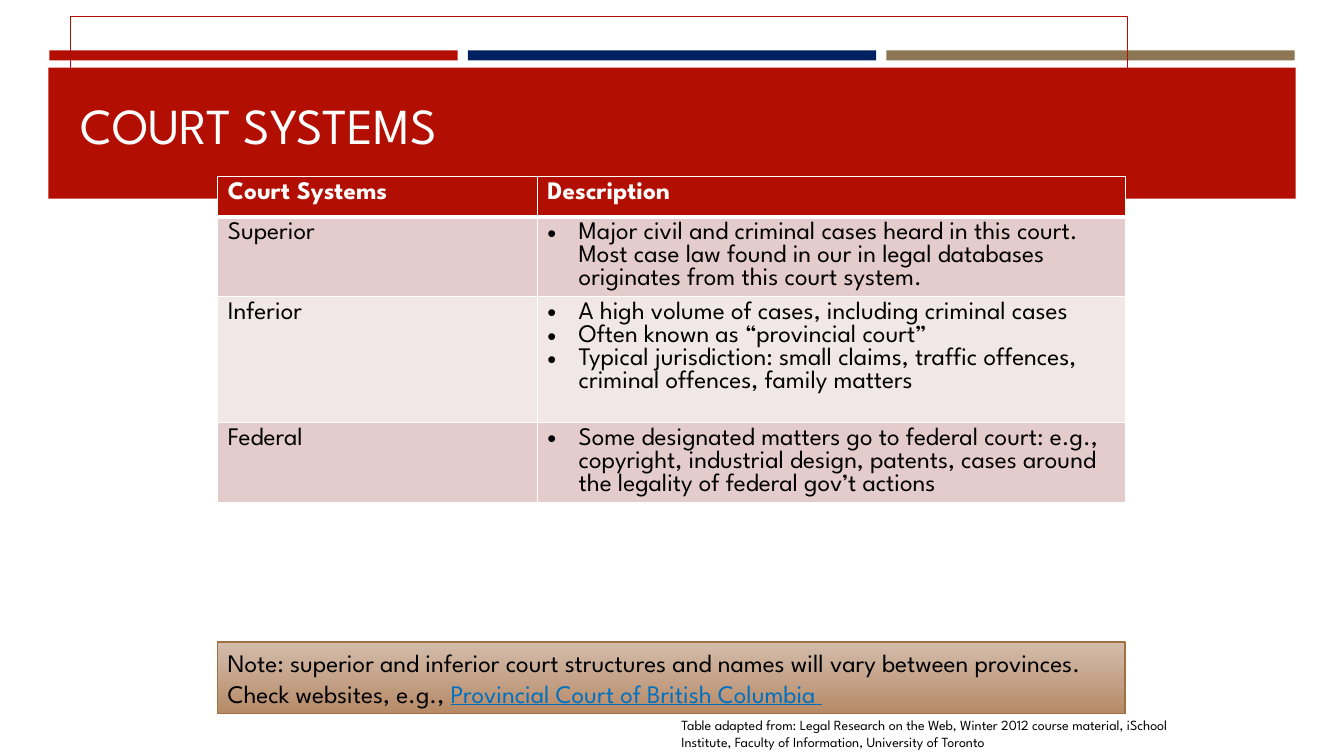
from lxml import etree
from pptx import Presentation
from pptx.dml.color import RGBColor
from pptx.enum import shapes, text
from pptx.oxml import ns
from pptx.util import Inches, Pt

RED = RGBColor(0xB2, 0x0F, 0x02)
NAVY = RGBColor(0x00, 0x20, 0x60)
TAN = RGBColor(0x8D, 0x76, 0x54)
WHITE = RGBColor(0xFF, 0xFF, 0xFF)
BLACK = RGBColor(0x00, 0x00, 0x00)
LINK_BLUE = RGBColor(0x00, 0x70, 0xC0)
ROSE = RGBColor(0xE4, 0xCC, 0xCC)
PALE_ROSE = RGBColor(0xF2, 0xE7, 0xE7)
NOTE_TOP = RGBColor(0xCF, 0xB5, 0xA3)
NOTE_BOTTOM = RGBColor(0xB7, 0x8A, 0x66)
NOTE_LINE = RGBColor(0xA0, 0x70, 0x42)


def add_run(paragraph, wording, size, color, **formats):
    run = paragraph.add_run()
    run.text = wording
    run.font.color.rgb = color
    for name, value in {"name": "League Spartan", "size": Pt(size), **formats}.items():
        setattr(run.font, name, value)


def add_rectangle(left, top, width, height, color):
    shape = slide.shapes.add_shape(
        shapes.MSO_SHAPE.RECTANGLE, Inches(left), Inches(top), Inches(width), Inches(height))
    shape.shadow.inherit = False
    shape.fill.solid()
    shape.fill.fore_color.rgb = color
    shape.line.fill.background()
    return shape


presentation = Presentation()
presentation.slide_width = Inches(13.33)
presentation.slide_height = Inches(7.5)
slide = presentation.slides.add_slide(presentation.slide_layouts[5])

# Three bars above the title band
for index, color in enumerate([RED, NAVY, TAN]):
    add_rectangle(0.49 + index * 4.15, 0.5, 4.05, 0.1, color)
add_rectangle(0.48, 0.67, 12.37, 1.3, RED)

# Title, outlined and in front of the band
title = slide.shapes.title
slide.shapes._spTree.append(title._element)
for name, value in {"left": 0.7, "top": 0.16, "width": 10.48, "height": 1.42}.items():
    setattr(title, name, Inches(value))
title.line.color.rgb = RED
title.line.width = Pt(0.75)
title.text_frame.vertical_anchor = text.MSO_ANCHOR.BOTTOM
title.text_frame.paragraphs[0].alignment = text.PP_ALIGN.LEFT
add_run(title.text_frame.paragraphs[0], "COURT SYSTEMS", 36, WHITE)

# Table of courts
courts = [
    ("Court Systems", ["Description"]),
    ("Superior", ["Major civil and criminal cases heard in this court. Most case law found in our "
                  "in legal databases originates from this court system."]),
    ("Inferior", ["A high volume of cases, including criminal cases",
                  "Often known as “provincial court”",
                  "Typical jurisdiction: small claims, traffic offences, criminal offences, "
                  "family matters"]),
    ("Federal", ["Some designated matters go to federal court: e.g., copyright, industrial design, "
                 "patents, cases around the legality of federal gov’t actions"]),
]
row_heights = [0.4, 0.79, 1.25, 0.79]
row_fills = [RED, ROSE, PALE_ROSE, ROSE]
table = slide.shapes.add_table(
    len(courts), 2, Inches(2.16), Inches(1.75), Inches(9), Inches(sum(row_heights))).table
for column, width in zip(table.columns, [3.17, 5.83]):
    column.width = Inches(width)

for row_index, (court, descriptions) in enumerate(courts):
    table.rows[row_index].height = Inches(row_heights[row_index])
    is_header = row_index == 0
    for column_index, lines in enumerate([[court], descriptions]):
        cell = table.cell(row_index, column_index)
        for line_index, line in enumerate(lines):
            frame = cell.text_frame
            paragraph = frame.add_paragraph() if line_index else frame.paragraphs[0]
            add_run(paragraph, line, 18, WHITE if is_header else BLACK, bold=is_header)
            if column_index and not is_header:
                properties = paragraph._p.get_or_add_pPr()
                properties.set("marL", str(Inches(0.31)))
                properties.set("indent", str(Inches(-0.31)))
                etree.SubElement(properties, ns.qn("a:buFont"), typeface="Arial")
                etree.SubElement(properties, ns.qn("a:buChar"), char="•")
        # Borders come before the fill in the cell properties
        cell_properties = cell._tc.get_or_add_tcPr()
        for side in ["lnL", "lnR", "lnT", "lnB"]:
            thick = (is_header and side == "lnB") or (row_index == 1 and side == "lnT")
            border = etree.SubElement(
                cell_properties, ns.qn(f"a:{side}"), w=str(Pt(3 if thick else 1)))
            border_fill = etree.SubElement(border, ns.qn("a:solidFill"))
            etree.SubElement(border_fill, ns.qn("a:srgbClr"), val=str(WHITE))
        cell.fill.solid()
        cell.fill.fore_color.rgb = row_fills[row_index]

# Note with a gradient fill
note = add_rectangle(2.16, 6.37, 9, 0.71, NOTE_TOP)
note.fill.gradient()
note.fill.gradient_angle = 270
for stop, color, position in zip(note.fill.gradient_stops, [NOTE_TOP, NOTE_BOTTOM], [0, 1]):
    stop.color.rgb = color
    stop.position = position
first_color = note.fill._xPr.find(".//" + ns.qn("a:srgbClr"))
etree.SubElement(first_color, ns.qn("a:alpha"), val="90000")
note.line.color.rgb = NOTE_LINE
note.line.width = Pt(1)
paragraph = note.text_frame.paragraphs[0]
add_run(paragraph, "Note: superior and inferior court structures and names will vary between "
        "provinces. Check websites, e.g., ", 18, BLACK)
add_run(paragraph, "Provincial Court of British Columbia ", 18, LINK_BLUE, underline=True)

# Source of the table
credit = slide.shapes.add_textbox(Inches(6.66), Inches(7.06), Inches(5.15), Inches(0.44))
add_run(credit.text_frame.paragraphs[0], "Table adapted from: Legal Research on the Web, Winter "
        "2012 course material, iSchool Institute, Faculty of Information, University of Toronto",
        10, BLACK)

for shape in [note, credit]:
    shape.text_frame.word_wrap = True
    shape.text_frame.paragraphs[0].alignment = text.PP_ALIGN.LEFT

presentation.save("out.pptx")
